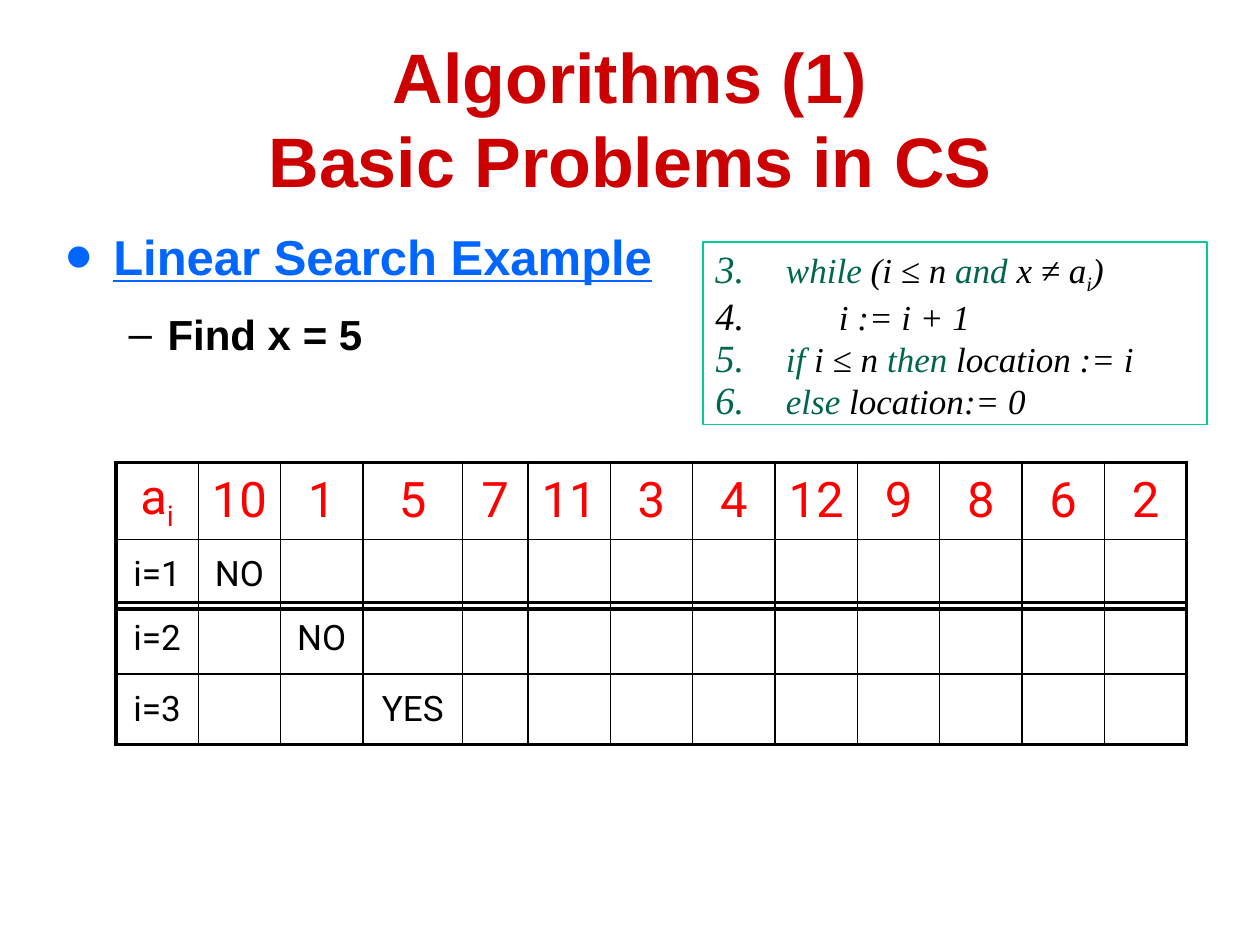
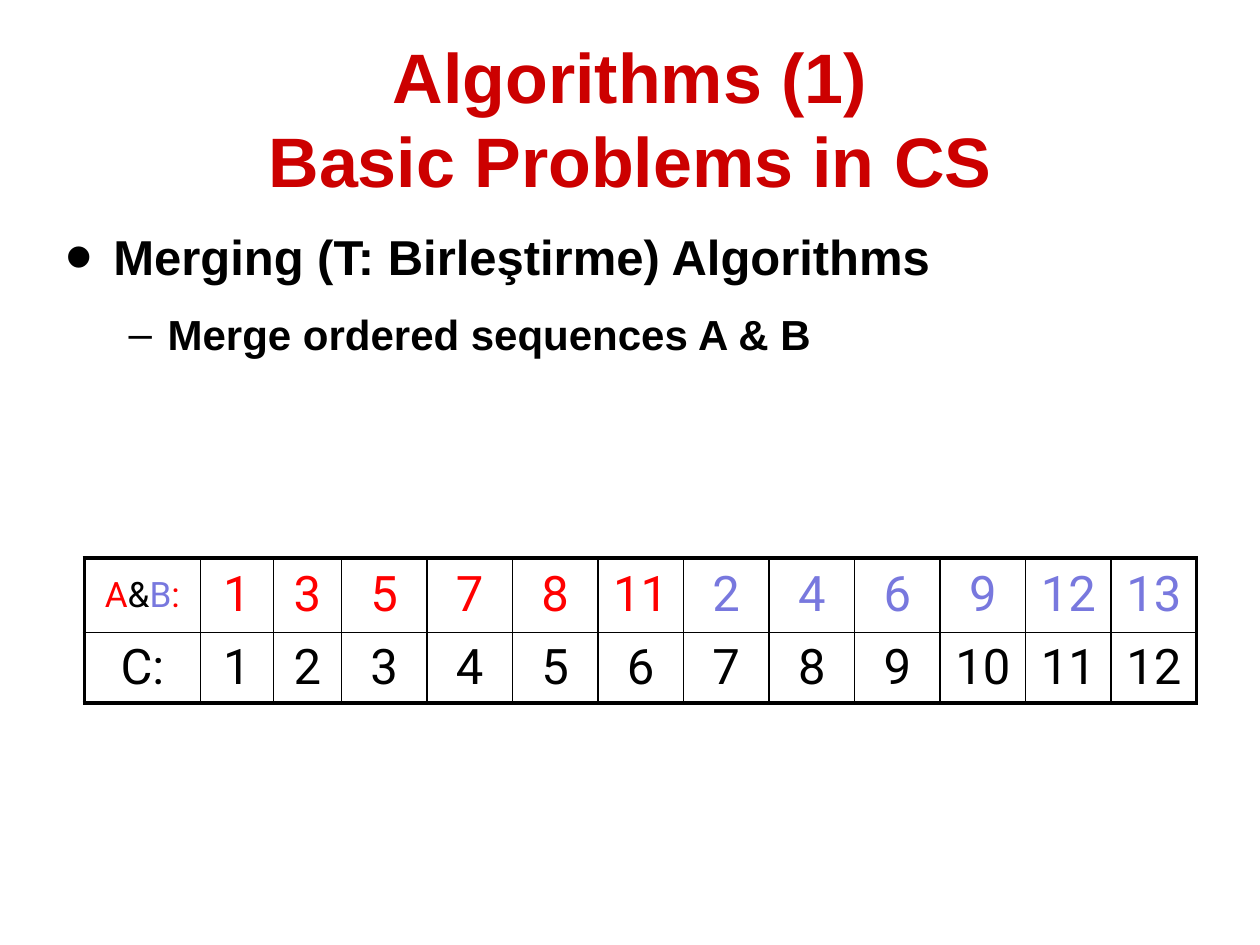
import pptx
import pptx.dml.color
import pptx.enum.shapes
import pptx.enum.text
import pptx.oxml
import pptx.oxml.ns
import pptx.util

Inches, Pt = pptx.util.Inches, pptx.util.Pt
PP_ALIGN = pptx.enum.text.PP_ALIGN
ANCHOR = pptx.enum.text.MSO_ANCHOR

# Shared look
BLACK, TITLE_RED, LINK_BLUE = "000000", "CC0000", "0066FF"
RED, VIOLET, KEYWORD, BOX_LINE = "FF0000", "7878DE", "00664D", "00CC99"
HEADING = {"name": "Arial", "bold": True}
CELL = {"name": "Roboto", "bold": False}
CODE = {"name": "Times New Roman", "size": 20, "italic": True}
SUBSCRIPT = -25000
OUTER_BORDER, INNER_BORDER = 2.25, 1

# Content: a text part is (text, colour[, baseline])
TITLE_LINES = ["Algorithms (1)", "Basic Problems in CS"]
CODE_LINES = [  # (text indent, parts)
    (0.56, [("while ", KEYWORD), ("(i ≤ n ", BLACK), ("and", KEYWORD),
            (" x ≠ a", BLACK), ("i", BLACK, SUBSCRIPT), (")", BLACK)]),
    (0.98, [("i := i + 1", BLACK)]),
    (0.56, [("if", KEYWORD), (" i ≤ n ", BLACK), ("then", KEYWORD),
            (" location := i", BLACK)]),
    (0.56, [("else", KEYWORD), (" location:= 0", BLACK)]),
]
SEARCHED = [10, 1, 5, 7, 11, 3, 4, 12, 9, 8, 6, 2]
SEQUENCE_A = [1, 3, 5, 7, 8, 11]
SEQUENCE_B = [2, 4, 6, 9, 12, 13]


def numbers(values, color):
    return [(28, [(str(value), color)]) for value in values]


def search_step(index, answer):
    """One row of the search: the answer stands under the tested element."""
    cells = [None] * (len(SEARCHED) + 1)
    cells[0] = (20, [(f"i={index}", BLACK)])
    cells[index] = (20, [(answer, BLACK)])
    return cells


# Table rows hold cells of (size, parts); "special" gives the uneven columns
SEARCH_COLUMNS = {"left": 0.92, "width": 8.5, "special": {3: 0.79, 4: 0.52}}
SEARCH_START = dict(
    SEARCH_COLUMNS, top=3.67, heights=[0.61, 0.55],
    rows=[[(28, [("a", RED), ("i", RED, SUBSCRIPT)])] + numbers(SEARCHED, RED),
          search_step(1, "NO")])
SEARCH_END = dict(
    SEARCH_COLUMNS, top=4.78, heights=[0.57, 0.56],
    rows=[search_step(2, "NO"), search_step(3, "YES")])
MERGE = dict(
    left=0.67, width=8.83, special={0: 0.92, 1: 0.58, 2: 0.54},
    top=4.43, heights=[0.59, 0.56],
    rows=[[(20, [("A", RED), ("&", BLACK), ("B", VIOLET), (":", RED)])]
          + numbers(SEQUENCE_A, RED) + numbers(SEQUENCE_B, VIOLET),
          [(28, [("C:", BLACK)])] + numbers(range(1, 13), BLACK)])


def rgb(color):
    return pptx.dml.color.RGBColor.from_string(color)


def write(paragraph, parts, **style):
    """Add coloured runs that share one style."""
    for text, color, *baseline in parts:
        run = paragraph.add_run()
        run.text = text
        for name, value in style.items():
            setattr(run.font, name, Pt(value) if name == "size" else value)
        run.font.color.rgb = rgb(color)
        if baseline:
            run._r.get_or_add_rPr().set("baseline", str(baseline[0]))


def element(tag, **attributes):
    node = pptx.oxml.parse_xml(f"<a:{tag} {pptx.oxml.ns.nsdecls('a')}/>")
    for name, value in attributes.items():
        node.set(name, str(value))
    return node


def add_bullet(paragraph, margin, hanging, percent, tag, **attributes):
    properties = paragraph._p.get_or_add_pPr()
    properties.set("marL", str(Inches(margin)))
    properties.set("indent", str(-Inches(hanging)))
    properties.append(element("buSzPct", val=percent * 1000))
    properties.append(element(tag, **attributes))


def place(shape, left, top, width, height):
    shape.left, shape.top = Inches(left), Inches(top)
    shape.width, shape.height = Inches(width), Inches(height)
    shape.text_frame.auto_size = pptx.enum.text.MSO_AUTO_SIZE.NONE


def add_topic_slide(presentation, topic, task, body_height, color, underline):
    slide = presentation.slides.add_slide(presentation.slide_layouts[1])
    # Title
    title, body = slide.shapes.title, slide.placeholders[1]
    place(title, 0, 0.33, 10, 1.17)
    title.text_frame.vertical_anchor = ANCHOR.MIDDLE
    title.text_frame.margin_top = Inches(0.09)
    paragraph = title.text_frame.paragraphs[0]
    paragraph.alignment = PP_ALIGN.CENTER
    for index, line in enumerate(TITLE_LINES):
        if index:
            paragraph.add_line_break()
        write(paragraph, [(line, TITLE_RED)], size=40, **HEADING)
    # Topic and task
    place(body, 0.42, 1.75, 9.25, body_height)
    first = body.text_frame.paragraphs[0]
    first.space_before = Pt(0)
    add_bullet(first, 0.38, 0.38, 160, "buChar", char="•")
    write(first, [(topic, color)], size=28, underline=underline, **HEADING)
    second = body.text_frame.add_paragraph()
    second.level = 1
    second.space_before = Pt(13)
    add_bullet(second, 0.81, 0.31, 100, "buChar", char="–")
    write(second, [(task, BLACK)], size=24, **HEADING)
    return slide


def set_borders(cell, widths):
    properties = cell._tc.get_or_add_tcPr()
    for index, (side, width) in enumerate(widths.items()):
        line = element(f"ln{side}", w=Pt(width))
        fill = element("solidFill")
        fill.append(element("srgbClr", val=BLACK))
        line.append(fill)
        properties.insert(index, line)


def add_grid(slide, left, top, width, special, heights, rows):
    row_count, column_count = len(rows), len(rows[0])
    table = slide.shapes.add_table(
        row_count, column_count, Inches(left), Inches(top),
        Inches(width), Inches(sum(heights))).table
    table.first_row = table.horz_banding = False
    regular = (width - sum(special.values())) / (column_count - len(special))
    for index, column in enumerate(table.columns):
        column.width = Inches(special.get(index, regular))
    for row_index, cells in enumerate(rows):
        table.rows[row_index].height = Inches(heights[row_index])
        for column_index, content in enumerate(cells):
            cell = table.cell(row_index, column_index)
            cell.vertical_anchor = ANCHOR.MIDDLE
            cell.fill.background()
            on_edge = {"L": column_index == 0,
                       "R": column_index == column_count - 1,
                       "T": row_index == 0,
                       "B": row_index == row_count - 1}
            set_borders(cell, {side: OUTER_BORDER if edge else INNER_BORDER
                               for side, edge in on_edge.items()})
            if content:
                size, parts = content
                paragraph = cell.text_frame.paragraphs[0]
                paragraph.alignment = PP_ALIGN.CENTER
                write(paragraph, parts, size=size, **CELL)


def add_code_box(slide):
    box = slide.shapes.add_shape(
        pptx.enum.shapes.MSO_SHAPE.RECTANGLE,
        Inches(5.58), Inches(1.92), Inches(4), Inches(1.45))
    box.shadow.inherit = False
    box.fill.background()
    box.line.color.rgb = rgb(BOX_LINE)
    box.line.width = Pt(0.75)
    frame = box.text_frame
    frame.word_wrap = True
    frame.vertical_anchor = ANCHOR.TOP
    for index, (indent, parts) in enumerate(CODE_LINES):
        paragraph = frame.add_paragraph() if index else frame.paragraphs[0]
        paragraph.alignment = PP_ALIGN.LEFT
        add_bullet(paragraph, indent, indent, 110, "buAutoNum",
                   type="arabicPeriod", startAt=3)
        write(paragraph, parts, **CODE)


def main():
    presentation = pptx.Presentation()
    presentation.slide_width, presentation.slide_height = Inches(10), Inches(7.5)

    # Linear search
    slide = add_topic_slide(presentation, "Linear Search Example",
                            "Find x = 5", 1.17, LINK_BLUE, True)
    add_grid(slide, **SEARCH_START)
    add_code_box(slide)
    add_grid(slide, **SEARCH_END)

    # Merging
    slide = add_topic_slide(presentation, "Merging (T: Birleştirme) Algorithms",
                            "Merge ordered sequences A & B", 1.42, BLACK, False)
    add_grid(slide, **MERGE)

    presentation.save("out.pptx")


if __name__ == "__main__":
    main()
